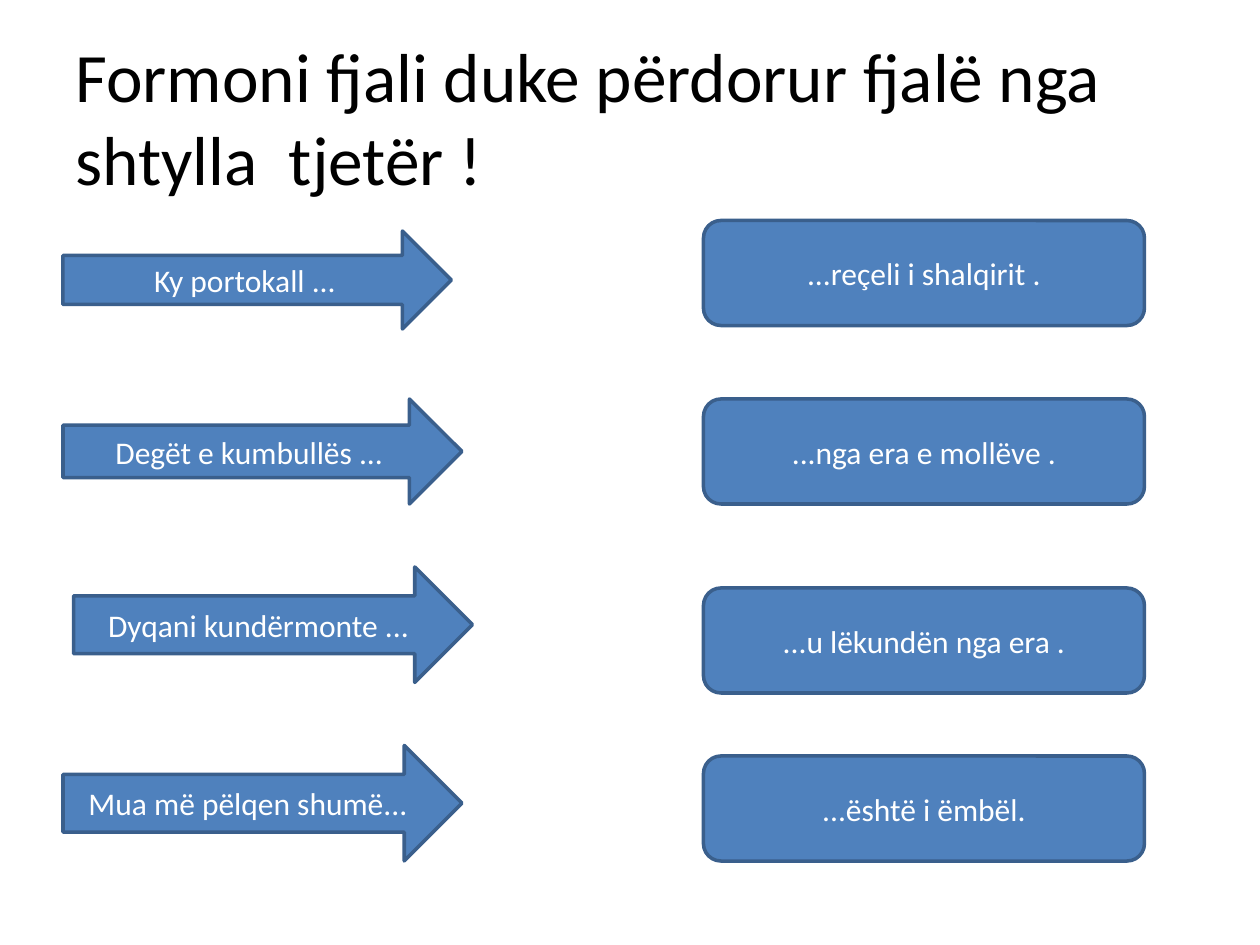
from pptx import Presentation
from pptx.dml.color import RGBColor
from pptx.enum.shapes import MSO_SHAPE
from pptx.enum.text import MSO_ANCHOR, PP_ALIGN
from pptx.util import Inches, Pt

ARROW = MSO_SHAPE.RIGHT_ARROW
CARD = MSO_SHAPE.ROUNDED_RECTANGLE
MIDDLE = MSO_ANCHOR.MIDDLE
LEFT, CENTER = PP_ALIGN.LEFT, PP_ALIGN.CENTER

COLORS = {"title": "000000", "fill": "4F81BD", "outline": "3A5F8C", "label": "FFFFFF"}
FONT = "Calibri"
COLUMNS, ROWS = 120, 90
WIDTH, HEIGHT = Inches(10), Inches(7.5)

TITLE = "Formoni fjali duke përdorur fjalë nga shtylla  tjetër !"
TITLE_BOX = (6, 3.6, 108, 15)
BEGINNINGS_BOX = (6, 22, 38, 60)
ENDINGS_BOX = (67, 21, 42, 61)
BEGINNINGS = [
    ("Ky portokall ...", (0, 0, 37, 9.33)),
    ("Degët e kumbullës ...", (0, 16, 38, 10)),
    ("Dyqani kundërmonte ...", (1, 32, 38, 11)),
    ("Mua më pëlqen shumë...", (0, 49, 38, 11)),
]
ENDINGS = [
    ("...reçeli i shalqirit .", 0),
    ("...nga era e mollëve .", 17),
    ("...u lëkundën nga era .", 35),
    ("...është i ëmbël.", 51),
]
CARD_ROWS = 10


def place(box):
    left, top, width, height = box
    column, row = WIDTH / COLUMNS, HEIGHT / ROWS
    return [round(length) for length in
            (left * column, top * row, width * column, height * row)]


def write(holder, text, size=18, color="label", align=CENTER):
    frame = holder.text_frame
    frame.word_wrap = True
    frame.vertical_anchor = MIDDLE
    paragraph = frame.paragraphs[0]
    paragraph.alignment = align
    run = paragraph.add_run()
    run.text = text
    run.font.name = FONT
    run.font.size = Pt(size)
    run.font.color.rgb = RGBColor.from_string(COLORS[color])


def add_block(slide, preset, box, text):
    block = slide.shapes.add_shape(preset, *place(box))
    block.shadow.inherit = False
    block.fill.solid()
    block.fill.fore_color.rgb = RGBColor.from_string(COLORS["fill"])
    block.line.color.rgb = RGBColor.from_string(COLORS["outline"])
    block.line.width = Pt(2)
    write(block, text)


def add_title(slide, box):
    title = slide.shapes.add_textbox(*place(box))
    write(title, TITLE, size=39.6, color="title", align=LEFT)


def add_beginnings(slide, box):
    left, top = box[:2]
    for text, (column, row, width, height) in BEGINNINGS:
        add_block(slide, ARROW, (left + column, top + row, width, height), text)


def add_endings(slide, box):
    left, top, width = box[:3]
    for text, row in ENDINGS:
        add_block(slide, CARD, (left, top + row, width, CARD_ROWS), text)


def main():
    deck = Presentation()
    deck.slide_width, deck.slide_height = WIDTH, HEIGHT
    slide = deck.slides.add_slide(deck.slide_layouts[6])
    add_title(slide, TITLE_BOX)
    add_beginnings(slide, BEGINNINGS_BOX)
    add_endings(slide, ENDINGS_BOX)
    deck.save("out.pptx")


if __name__ == "__main__":
    main()
